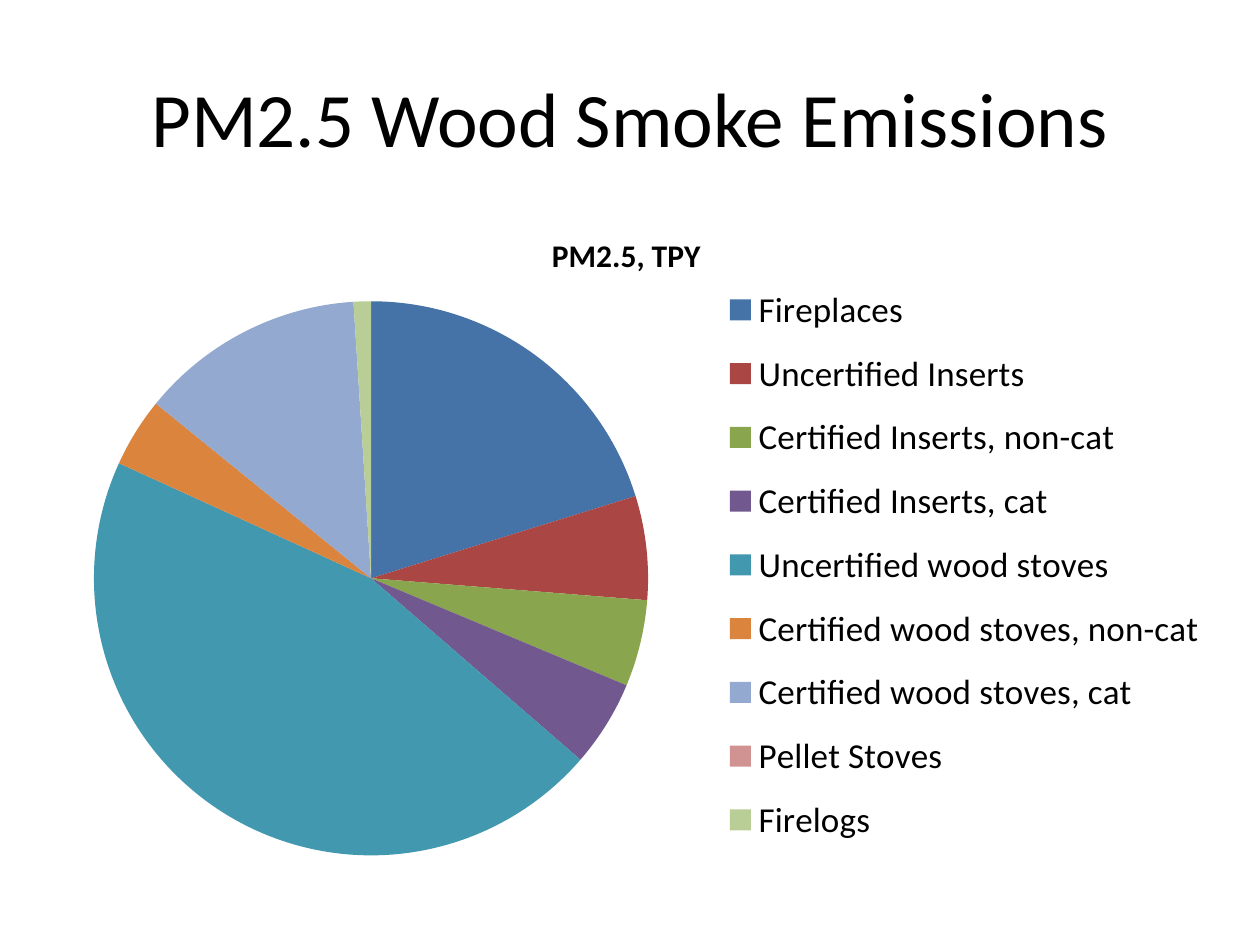
from dataclasses import dataclass

from lxml import etree
from pptx import Presentation
from pptx.chart import data as chart_data
from pptx.dml import color
from pptx.enum import chart as chart_enum, text
from pptx.oxml import ns
from pptx.util import Cm, Pt


@dataclass(frozen=True)
class Theme:
    """Hold the font, type sizes and colours of the slide."""
    font: str = "Calibri"
    ink: str = "000000"
    title_size: int = 44
    chart_title_size: int = 18
    legend_size: int = 20
    slices: tuple = ("4572A7", "AA4643", "89A54E", "71588F", "4198AF",
                     "DB843D", "93A9CF", "D19392", "B9CD96")


THEME = Theme()
SERIES_NAME = "PM2.5, TPY"
EMISSIONS = {
    "Fireplaces": 20,
    "Uncertified Inserts": 6,
    "Certified Inserts, non-cat": 5,
    "Certified Inserts, cat": 5,
    "Uncertified wood stoves": 45,
    "Certified wood stoves, non-cat": 4,
    "Certified wood stoves, cat": 13,
    "Pellet Stoves": 0,
    "Firelogs": 1,
}


def format_font(font, size, bold=False):
    """Apply the theme font and ink at the given size."""
    font.name = THEME.font
    font.size = Pt(size)
    font.bold = bold
    font.color.rgb = color.RGBColor.from_string(THEME.ink)


def write_text(frame, content, *, size, bold=False, align=text.PP_ALIGN.CENTER):
    """Write one formatted paragraph into a text frame."""
    paragraph = frame.paragraphs[0]
    paragraph.alignment = align
    run = paragraph.add_run()
    run.text = content
    format_font(run.font, size, bold)


def add_title(slide, content):
    """Add the slide title as a centred text box."""
    shape = slide.shapes.add_textbox(Cm(1.27), Cm(0.76), Cm(22.86), Cm(3.18))
    frame = shape.text_frame
    frame.word_wrap = True
    frame.vertical_anchor = text.MSO_ANCHOR.MIDDLE
    write_text(frame, content, size=THEME.title_size)


def place_part(element, following, inner=False, **box):
    """Set a chart part's manual layout as fractions of the chart."""
    for layout in element.findall(ns.qn("c:layout")):
        element.remove(layout)
    layout = etree.Element(ns.qn("c:layout"))
    manual = etree.SubElement(layout, ns.qn("c:manualLayout"))
    settings = {"layoutTarget": "inner"} if inner else {}
    settings.update(xMode="edge", yMode="edge", **box)
    for name, value in settings.items():
        etree.SubElement(manual, ns.qn(f"c:{name}"), val=str(value))
    element.find(ns.qn(f"c:{following}")).addprevious(layout)


def add_pie(slide, name, values):
    """Add the pie chart with its title, legend and slice colours."""
    source = chart_data.CategoryChartData()
    source.categories = list(values)
    source.add_series(name, list(values.values()))
    chart = slide.shapes.add_chart(
        chart_enum.XL_CHART_TYPE.PIE, Cm(0.66), Cm(4.19), Cm(23.93), Cm(13.46), source).chart
    format_font(chart.font, 10)
    chart.has_title = True
    write_text(chart.chart_title.text_frame, name, size=THEME.chart_title_size, bold=True)
    chart.chart_title.include_in_layout = False

    chart.has_legend = True
    legend = chart.legend
    legend.position = chart_enum.XL_LEGEND_POSITION.RIGHT
    legend.include_in_layout = False
    format_font(legend.font, THEME.legend_size)

    plot = chart.plots[0]
    plot.vary_by_categories = True
    for index, slice_color in enumerate(THEME.slices):
        fill = plot.series[0].points[index].format.fill
        fill.solid()
        fill.fore_color.rgb = color.RGBColor.from_string(slice_color)

    plot_area = chart.element.find(".//" + ns.qn("c:plotArea"))
    legend_part = chart.element.find(".//" + ns.qn("c:legend"))
    place_part(plot_area, "pieChart", inner=True, x=0.05, y=0.14, w=0.47, h=0.83)
    place_part(legend_part, "overlay", x=0.58, y=0.09, w=0.41, h=0.89)


def main():
    """Build and save the presentation."""
    presentation = Presentation()
    presentation.slide_width = Cm(25.4)
    presentation.slide_height = Cm(19.05)
    slide = presentation.slides.add_slide(presentation.slide_layouts[6])
    add_title(slide, "PM2.5 Wood Smoke Emissions")
    add_pie(slide, SERIES_NAME, EMISSIONS)
    presentation.save("out.pptx")


if __name__ == "__main__":
    main()
